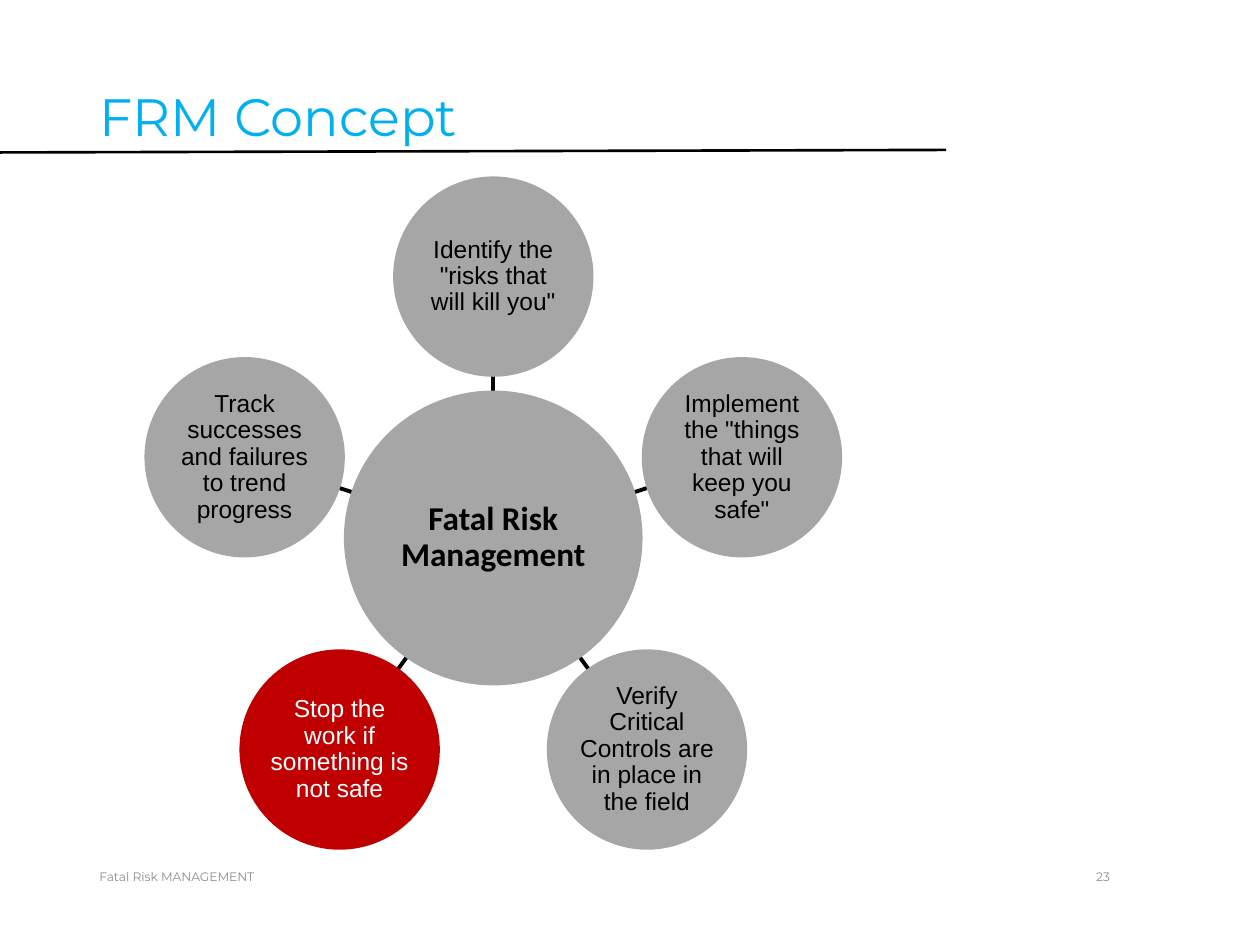
from math import cos, radians, sin

from lxml import etree
from pptx import Presentation
from pptx.dml.color import RGBColor
from pptx.enum.shapes import MSO_CONNECTOR, MSO_SHAPE
from pptx.enum.text import MSO_ANCHOR, MSO_AUTO_SIZE, PP_ALIGN
from pptx.oxml.ns import qn
from pptx.util import Inches, Pt

STRAIGHT = MSO_CONNECTOR.STRAIGHT
OVAL = MSO_SHAPE.OVAL
TOP, MIDDLE = MSO_ANCHOR.TOP, MSO_ANCHOR.MIDDLE
NO_FIT = MSO_AUTO_SIZE.NONE
LEFT, CENTER = PP_ALIGN.LEFT, PP_ALIGN.CENTER
MARGINS = ("margin_left", "margin_top", "margin_right", "margin_bottom")


def color(value):
    return RGBColor.from_string(value)


def write(shape, text, font, ink, align, anchor, spacing=1.0, inset=None):
    frame = shape.text_frame
    frame.text = text
    settings = {"word_wrap": True, "auto_size": NO_FIT, "vertical_anchor": anchor}
    if inset is not None:
        settings.update({margin: Inches(inset) for margin in MARGINS})
    for name, value in settings.items():
        setattr(frame, name, value)
    para = frame.paragraphs[0]
    para.alignment = align
    para.line_spacing = spacing
    para.space_before = Pt(0)
    span = para.runs[0]
    for name, value in font.items():
        setattr(span.font, name, value)
    span.font.color.rgb = color(ink)


title_font = {"name": "Montserrat", "size": Pt(30), "bold": False}
footer_font = {"name": "Montserrat", "size": Pt(7)}
hub_font = {"name": "Calibri", "size": Pt(19), "bold": True}
step_font = {"name": "Arial", "size": Pt(14)}

deck = Presentation()
deck.slide_width, deck.slide_height = Inches(10), Inches(7.5)
page = deck.slides.add_slide(deck.slide_layouts[5])

title = page.shapes.title
title_area = {"left": 0.69, "top": 0.67, "width": 6.82, "height": 0.71}
for name, value in title_area.items():
    setattr(title, name, Inches(value))
write(title, "FRM Concept", title_font, "00B0F0", LEFT, TOP, 0.9)

hub_x, hub_y = 3.915, 4.27
hub_width, hub_height = 2.37, 2.34
step_size = 1.59
orbit = 2.075
spoke_start, spoke_end = 1.17, 1.3

steps = [
    ('Identify the "risks that will kill you"', "A6A6A6", "000000"),
    ('Implement the "things that will keep you safe"', "A6A6A6", "000000"),
    ("Verify Critical Controls are in place in the field", "A6A6A6", "000000"),
    ("Stop the work if something is not safe", "C00000", "FFFFFF"),
    ("Track successes and failures to trend progress", "A6A6A6", "000000"),
]

lines = [(0, 1.21, 7.51, 1.19, 1.5)]
circles = [(hub_x, hub_y, hub_width, hub_height,
            "Fatal Risk Management", hub_font, "A6A6A6", "000000")]
for index, (text, fill, ink) in enumerate(steps):
    angle = radians(360 / len(steps) * index)
    across, down = sin(angle), -cos(angle)
    lines.append((hub_x + across * spoke_start, hub_y + down * spoke_start,
                  hub_x + across * spoke_end, hub_y + down * spoke_end, 2.25))
    circles.append((hub_x + across * orbit, hub_y + down * orbit,
                    step_size, step_size, text, step_font, fill, ink))

for start_x, start_y, end_x, end_y, weight in lines:
    line = page.shapes.add_connector(STRAIGHT, Inches(start_x), Inches(start_y),
                                     Inches(end_x), Inches(end_y))
    line.line.color.rgb = color("000000")
    line.line.width = Pt(weight)
    etree.SubElement(line._element.spPr, qn("a:effectLst"))

for center_x, center_y, width, height, text, font, fill, ink in circles:
    circle = page.shapes.add_shape(OVAL, Inches(center_x - width / 2),
                                   Inches(center_y - height / 2),
                                   Inches(width), Inches(height))
    circle.shadow.inherit = False
    circle.fill.solid()
    circle.fill.fore_color.rgb = color(fill)
    circle.line.fill.background()
    write(circle, text, font, ink, CENTER, MIDDLE, 0.9, 0.01)

footers = [
    ("Fatal Risk MANAGEMENT", 0.69, 6, LEFT),
    ("23", 7.51, 2.49, CENTER),
]
for text, left, width, align in footers:
    box = page.shapes.add_textbox(Inches(left), Inches(6.76), Inches(width), Inches(0.4))
    write(box, text, footer_font, "8C8C8C", align, MIDDLE)

deck.save("out.pptx")
